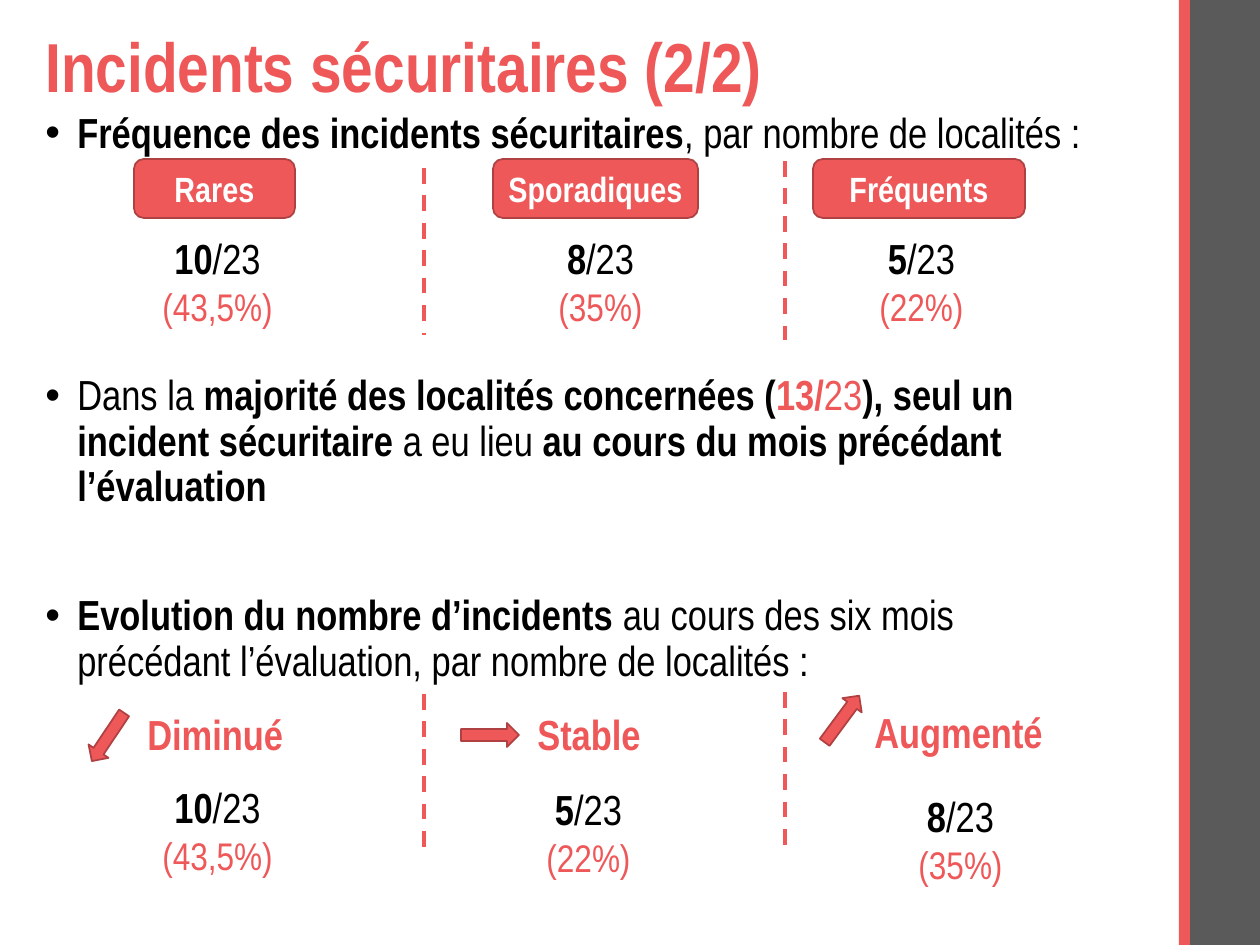
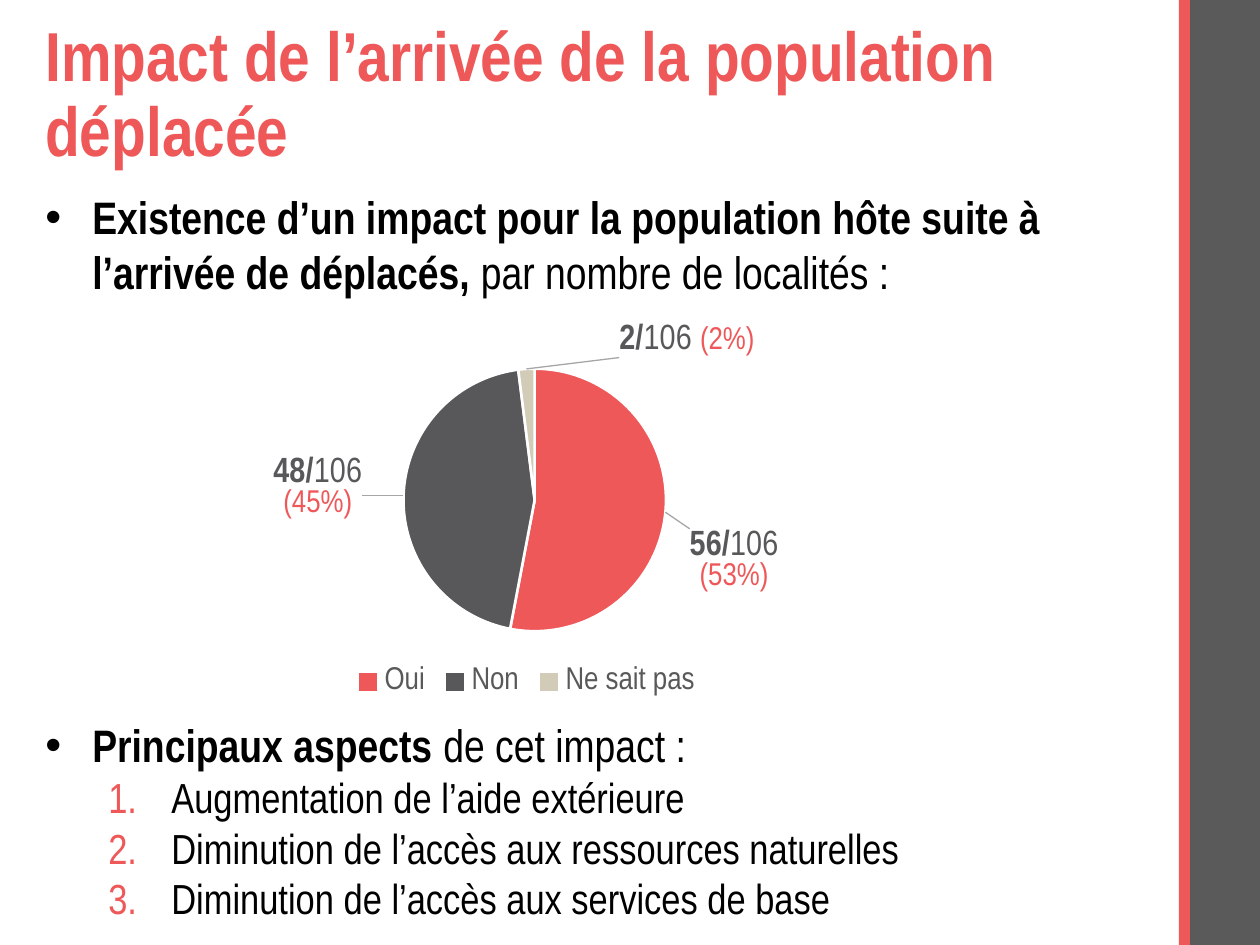
"""Build two slides on security incidents and the impact of displaced arrivals."""
from lxml.etree import SubElement
from pptx import Presentation
from pptx.chart.data import CategoryChartData
from pptx.dml.color import RGBColor
from pptx.enum.chart import XL_CHART_TYPE, XL_LABEL_POSITION, XL_LEGEND_POSITION
from pptx.enum.dml import MSO_LINE
from pptx.enum.shapes import MSO_CONNECTOR, MSO_SHAPE
from pptx.enum.text import MSO_ANCHOR, PP_ALIGN
from pptx.oxml import parse_xml
from pptx.oxml.ns import nsdecls, qn
from pptx.util import Pt

FONT = "Arial Narrow"
PX = 914400 / 126
COLORS = {"accent": "EE5859", "accent_edge": "B04142", "band": "5A5A5A",
          "black": "000000", "white": "FFFFFF", "slate": "58585A",
          "sand": "D2CBB8", "legend": "595959", "leader": "A6A6A6"}
STYLES = {"plain": (False, "black"), "bold": (True, "black"),
          "accent": (False, "accent"), "accent_bold": (True, "accent"),
          "pill": (True, "white"),
          "slate": (False, "slate"), "slate_bold": (True, "slate")}
BANDS = [(1190, 70, "band"), (1179, 11, "accent")]

INCIDENTS_TITLE = ("Incidents sécuritaires (2/2)", 23)
FINDINGS = [
    (0, [("Fréquence des incidents sécuritaires", "bold"),
         (", par nombre de localités :", "plain")]),
    (124, [("Dans la ", "plain"),
           ("majorité des localités concernées (", "bold"),
           ("13/", "accent_bold"), ("23", "accent"),
           ("), seul un incident sécuritaire ", "bold"),
           ("a eu lieu ", "plain"),
           ("au cours du mois précédant l’évaluation", "bold")]),
    (48, [("Evolution du nombre d’incidents ", "bold"),
          ("au cours des six mois précédant l’évaluation, "
           "par nombre de localités :", "plain")]),
]
LOCALITIES = 23
FREQUENCIES = [("Rares", 134, 161), ("Sporadiques", 493, 205), ("Fréquents", 813, 212)]
TRENDS = [("Diminué", (135, 702, 174), (79, 725), 123.8),
          ("Stable", (525, 702, 141), (461, 723), 0),
          ("Augmenté", (862, 700, 203), (813, 707), 306.5)]
STATS = [(10, "43,5%", 217, 226), (8, "35%", 600, 226), (5, "22%", 921, 226),
         (10, "43,5%", 217, 775), (5, "22%", 588, 777), (8, "35%", 960, 784)]
DIVIDERS = [(424, 168, 335), (785, 161, 340), (424, 694, 855), (785, 692, 853)]

IMPACT_TITLE = ("Impact de l’arrivée de la population déplacée", 50)
EXISTENCE = [("Existence d’un impact pour la population hôte suite à "
              "l’arrivée de déplacés, ", "bold"),
             ("par nombre de localités :", "plain")]
ASPECTS_HEADING = [("Principaux aspects ", "bold"), ("de cet impact :", "plain")]
ASPECTS = ["Augmentation de l’aide extérieure",
           "Diminution de l’accès aux ressources naturelles",
           "Diminution de l’accès aux services de base"]
ANSWERS = [("Oui", 53, "accent", "56/", "106", "(53%)", True, (0.02, 0.04)),
           ("Non", 45, "slate", "48/", "106", "(45%)", True, (-0.04, -0.02)),
           ("Ne sait pas ", 2, "sand", "2/", "106 ", "(2%)", False, (0.19, -0.01))]
PIE_LAYOUT = {"x": 0.35, "y": 0.16, "w": 0.31, "h": 0.66}


def px(*lengths):
    return [round(length * PX) for length in lengths]


def rgb(name):
    return RGBColor.from_string(COLORS[name])


def add_runs(paragraph, runs, size):
    for words, style in runs:
        run = paragraph.add_run()
        run.text = words
        bold, color = STYLES[style]
        run.font.name, run.font.size, run.font.bold = FONT, Pt(size), bold
        run.font.color.rgb = rgb(color)


def add_bullet(paragraph, margin, hanging, numbered=False):
    properties = paragraph._p.get_or_add_pPr()
    left, indent = px(margin, -hanging)
    properties.set("marL", str(left))
    properties.set("indent", str(indent))
    if numbered:
        color = SubElement(properties, qn("a:buClr"))
        SubElement(color, qn("a:srgbClr"), val=COLORS["accent"])
        SubElement(properties, qn("a:buFont"), typeface="+mj-lt")
        SubElement(properties, qn("a:buAutoNum"), type="arabicPeriod")
    else:
        SubElement(properties, qn("a:buFont"), typeface="Arial")
        SubElement(properties, qn("a:buChar"), char="•")


def add_text(slide, box, wrap=True):
    frame = slide.shapes.add_textbox(*px(*box)).text_frame
    frame.word_wrap = wrap
    return frame


def add_block(slide, preset, box, fill, edge=None):
    block = slide.shapes.add_shape(preset, *px(*box))
    block.shadow.inherit = False
    block.fill.solid()
    block.fill.fore_color.rgb = rgb(fill)
    if edge:
        block.line.color.rgb = rgb(edge)
        block.line.width = Pt(1)
    else:
        block.line.fill.background()
    return block


def add_base_slide(deck, title, top):
    slide = deck.slides.add_slide(deck.slide_layouts[6])
    for left, width, color in BANDS:
        add_block(slide, MSO_SHAPE.RECTANGLE, (left, 0, width, 945), color)
    frame = add_text(slide, (33, top, 1095, 93))
    frame.vertical_anchor = MSO_ANCHOR.MIDDLE
    frame.paragraphs[0].line_spacing = 0.9
    add_runs(frame.paragraphs[0], [(title, "accent_bold")], 39.6)
    return slide


def add_stat(slide, count, share, center, top):
    width = 137 if count >= 10 else 111
    frame = add_text(slide, (center - width // 2, top, width, 111), wrap=False)
    add_runs(frame.paragraphs[0], [(str(count), "bold"), (f"/{LOCALITIES}", "plain")], 24)
    add_runs(frame.add_paragraph(), [(f"({share})", "accent")], 22)
    for paragraph in frame.paragraphs:
        paragraph.alignment = PP_ALIGN.CENTER


def add_divider(slide, x, top, bottom):
    divider = slide.shapes.add_connector(MSO_CONNECTOR.STRAIGHT, *px(x, top, x, bottom))
    divider.line.color.rgb = rgb("accent")
    divider.line.width = Pt(2.25)
    divider.line.dash_style = MSO_LINE.DASH
    SubElement(divider._element.spPr, qn("a:effectLst"))


def build_incidents(deck):
    slide = add_base_slide(deck, *INCIDENTS_TITLE)
    body = add_text(slide, (33, 106, 1095, 809))
    for index, (space, runs) in enumerate(FINDINGS):
        paragraph = body.add_paragraph() if index else body.paragraphs[0]
        add_bullet(paragraph, 32, 32)
        paragraph.line_spacing = 0.9
        paragraph.space_before = Pt(space)
        add_runs(paragraph, runs, 24)
    for label, left, width in FREQUENCIES:
        pill = add_block(slide, MSO_SHAPE.ROUNDED_RECTANGLE, (left, 159, width, 59),
                         "accent", "accent_edge")
        pill.text_frame.word_wrap = False
        pill.text_frame.vertical_anchor = MSO_ANCHOR.MIDDLE
        paragraph = pill.text_frame.paragraphs[0]
        paragraph.alignment = PP_ALIGN.CENTER
        add_runs(paragraph, [(label, "pill")], 20)
    for label, (left, top, width), arrow_corner, angle in TRENDS:
        frame = add_text(slide, (left, top, width, 63), wrap=False)
        add_runs(frame.paragraphs[0], [(label, "accent_bold")], 24)
        arrow = add_block(slide, MSO_SHAPE.RIGHT_ARROW, (*arrow_corner, 58, 24),
                          "accent", "accent_edge")
        arrow.rotation = angle
    for stat in STATS:
        add_stat(slide, *stat)
    for divider in DIVIDERS:
        add_divider(slide, *divider)


def manual_layout(**values):
    parts = "".join(f'<c:{key} val="{value}"/>' for key, value in values.items())
    return parse_xml(f'<c:layout {nsdecls("c")}><c:manualLayout>{parts}'
                     '</c:manualLayout></c:layout>')


def add_answer_label(point, count, total, share, stacked):
    label = point.data_label
    paragraph = label.text_frame.paragraphs[0]
    add_runs(paragraph, [(count, "slate_bold"), (total, "slate")], 20)
    if stacked:
        paragraph = label.text_frame.add_paragraph()
    add_runs(paragraph, [(share, "accent")], 18)
    label.position = XL_LABEL_POSITION.OUTSIDE_END


def add_answer_pie(slide):
    data = CategoryChartData()
    data.categories = [answer[0] for answer in ANSWERS]
    data.add_series("Series 1", [answer[1] for answer in ANSWERS])
    chart = slide.shapes.add_chart(XL_CHART_TYPE.PIE, *px(107, 305, 847, 398), data).chart
    chart.has_title = False
    chart.font.name, chart.font.size = FONT, Pt(10)
    chart.has_legend = True
    chart.legend.position = XL_LEGEND_POSITION.BOTTOM
    chart.legend.include_in_layout = False
    chart.legend.font.name, chart.legend.font.size = FONT, Pt(18)
    chart.legend.font.color.rgb = rgb("legend")
    plot = chart.plots[0]
    plot.vary_by_categories = True
    series = plot.series[0]
    labels = series.data_labels
    labels.show_percentage, labels.show_value = True, False
    labels.font.name, labels.font.size = FONT, Pt(20)
    labels.font.color.rgb = rgb("slate")
    for index, (_, _, color, count, total, share, stacked, _) in enumerate(ANSWERS):
        point = series.points[index]
        point.format.fill.solid()
        point.format.fill.fore_color.rgb = rgb(color)
        point.format.line.color.rgb = rgb("white")
        point.format.line.width = Pt(1.5)
        add_answer_label(point, count, total, share, stacked)
    place_pie_parts(chart.element)


def place_pie_parts(chart_xml):
    for label, answer in zip(chart_xml.iter(qn("c:dLbl")), ANSWERS):
        x, y = answer[-1]
        label.find(qn("c:idx")).addnext(manual_layout(x=x, y=y))
    plot_area = next(chart_xml.iter(qn("c:plotArea")))
    for layout in plot_area.findall(qn("c:layout")):
        plot_area.remove(layout)
    plot_area.insert(0, manual_layout(layoutTarget="inner", xMode="edge",
                                      yMode="edge", **PIE_LAYOUT))
    labels = next(chart_xml.iter(qn("c:dLbls")))
    for leader_flag in labels.findall(qn("c:showLeaderLines")):
        labels.remove(leader_flag)
    SubElement(labels, qn("c:showLeaderLines"), val="1")
    labels.append(parse_xml(
        f'<c:leaderLines {nsdecls("c", "a")}><c:spPr><a:ln w="9525"><a:solidFill>'
        f'<a:srgbClr val="{COLORS["leader"]}"/></a:solidFill></a:ln></c:spPr>'
        '</c:leaderLines>'))


def build_impact(deck):
    slide = add_base_slide(deck, *IMPACT_TITLE)
    add_answer_pie(slide)
    existence = add_text(slide, (33, 183, 1071, 123))
    aspects = add_text(slide, (33, 711, 1095, 220))
    for frame, runs in ((existence, EXISTENCE), (aspects, ASPECTS_HEADING)):
        add_bullet(frame.paragraphs[0], 47, 47)
        add_runs(frame.paragraphs[0], runs, 26)
    for aspect in ASPECTS:
        paragraph = aspects.add_paragraph()
        paragraph.level = 1
        add_bullet(paragraph, 126, 63, numbered=True)
        add_runs(paragraph, [(aspect, "plain")], 24)


def main():
    deck = Presentation()
    deck.slide_width, deck.slide_height = px(1260, 945)
    build_incidents(deck)
    build_impact(deck)
    deck.save("out.pptx")


if __name__ == "__main__":
    main()
